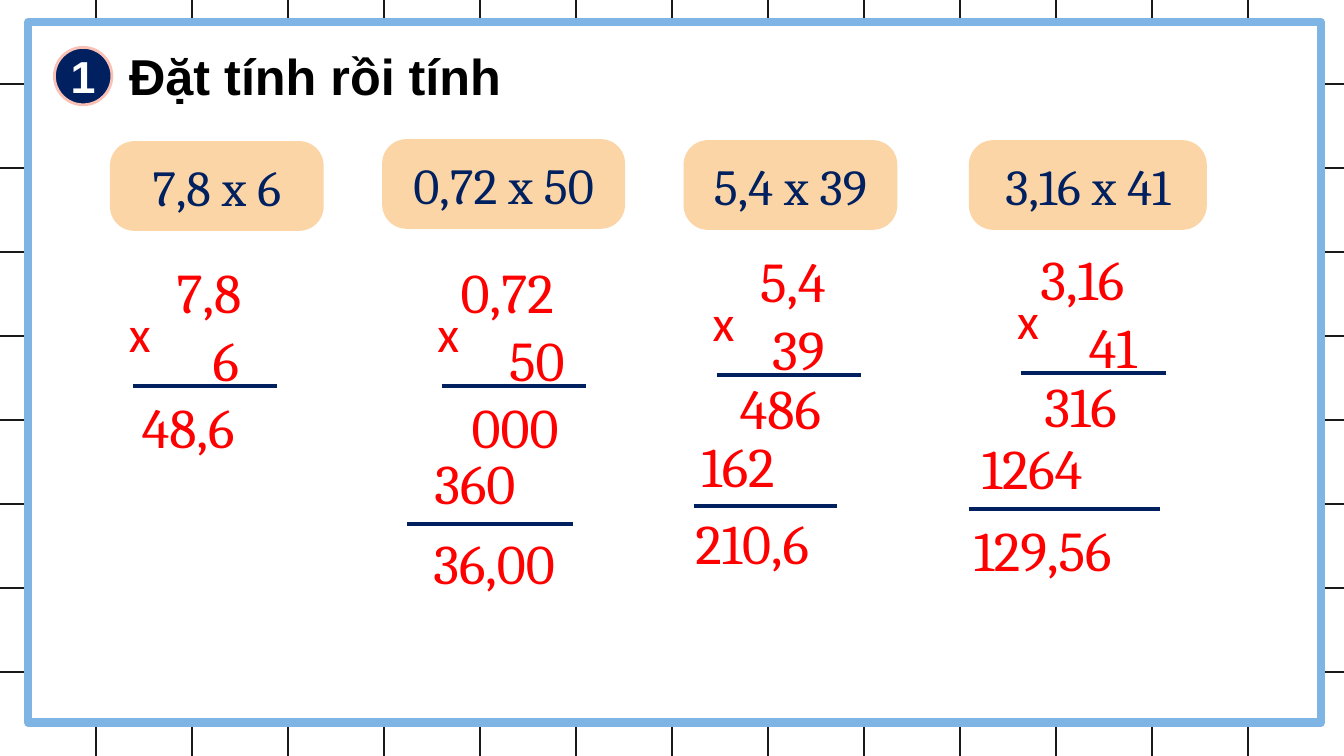
from lxml import etree
from pptx import Presentation
from pptx.dml.color import RGBColor
from pptx.enum import shapes as kinds, text as layout
from pptx.oxml.ns import qn
from pptx.util import Inches, Pt

NAVY = RGBColor(0x00, 0x20, 0x60)
RED = RGBColor(0xFF, 0x00, 0x00)
BLACK = RGBColor(0x00, 0x00, 0x00)
WHITE = RGBColor(0xFF, 0xFF, 0xFF)
GRID = RGBColor(0x19, 0x19, 0x19)
SKY = RGBColor(0x7F, 0xB5, 0xE5)
PINK = RGBColor(0xF9, 0xC1, 0xB5)
PEACH = RGBColor(0xFB, 0xD5, 0xA6)

WIDTH, HEIGHT = 13.33, 7.5
SPACE = 0.12  # width of one Cambria space at 40 pt

# Card: (text, left, top, width).
# Factors: left and top, then (number, indent in spaces) for each row.
# Products: (number, left, top). Sum line: (left, top, width) or None.
EXERCISES = [
    {"card": ("7,8 x 6", 1.09, 1.4, 2.12),
     "factors": (1.41, 2.51, [("7,8", 2), ("6", 5)]),
     "products": [("48,6", 1.31, 3.85)],
     "sum_line": None},
    {"card": ("0,72 x 50", 3.79, 1.38, 2.41),
     "factors": (4.47, 2.51, [("0,72", 0), ("50", 4)]),
     "products": [("000", 4.58, 3.85), ("360", 4.21, 4.4), ("36,00", 4.2, 5.19)],
     "sum_line": (4.04, 5.2, 1.64)},
    {"card": ("5,4 x 39", 6.78, 1.39, 2.12),
     "factors": (7.2, 2.4, [("5,4", 2), ("39", 3)]),
     "products": [("486", 7.24, 3.66), ("162", 6.86, 4.23), ("210,6", 6.8, 5)],
     "sum_line": (6.88, 5.02, 1.42)},
    {"card": ("3,16 x 41", 9.61, 1.39, 2.36),
     "factors": (10.22, 2.38, [("3,16", 0), ("41", 4)]),
     "products": [("316", 10.26, 3.64), ("1264", 9.64, 4.25), ("129,56", 9.56, 5.07)],
     "sum_line": (9.61, 5.05, 1.9)},
]


def add_run(paragraph, words, size, font, color, bold=False):
    run = paragraph.add_run()
    run.text = words
    run.font.size = Pt(size)
    run.font.name = font
    run.font.bold = bold
    run.font.color.rgb = color


def add_line(slide, x1, y1, x2, y2, color, weight):
    line = slide.shapes.add_connector(
        kinds.MSO_CONNECTOR.STRAIGHT, Inches(x1), Inches(y1), Inches(x2), Inches(y2))
    line.line.color.rgb = color
    line.line.width = Pt(weight)
    etree.SubElement(line.element.spPr, qn("a:effectLst"))


def add_panel(slide, preset, left, top, width, height, fill, outline=None, weight=0):
    """Add a flat filled shape, outlined only when a colour is given."""
    panel = slide.shapes.add_shape(
        preset, Inches(left), Inches(top), Inches(width), Inches(height))
    panel.shadow.inherit = False
    panel.fill.solid()
    panel.fill.fore_color.rgb = fill
    if outline is None:
        panel.line.fill.background()
    else:
        panel.line.color.rgb = outline
        panel.line.width = Pt(weight)
    return panel


def add_label(panel, words, size, font, color, bold=False):
    """Centre one line of text in a shape."""
    frame = panel.text_frame
    frame.word_wrap = False
    frame.vertical_anchor = layout.MSO_ANCHOR.MIDDLE
    frame.paragraphs[0].alignment = layout.PP_ALIGN.CENTER
    add_run(frame.paragraphs[0], words, size, font, color, bold)


def add_rows(slide, left, top, width, height, rows, size=40, font="Cambria"):
    """Add red text with one paragraph per (words, indent in spaces)."""
    box = slide.shapes.add_textbox(
        Inches(left), Inches(top), Inches(width), Inches(height))
    frame = box.text_frame
    frame.word_wrap = True
    for index, (words, spaces) in enumerate(rows):
        paragraph = frame.add_paragraph() if index else frame.paragraphs[0]
        if spaces:
            properties = paragraph._p.get_or_add_pPr()
            properties.set("marL", str(Inches(spaces * SPACE)))
            properties.set("indent", "0")
        add_run(paragraph, words, size, font, RED)


def add_grid(slide):
    for column in range(1, 14):
        x = column * WIDTH / 14
        add_line(slide, x, 0, x, HEIGHT, GRID, 1.5)
    for row in range(1, 9):
        y = row * HEIGHT / 9
        add_line(slide, 0, y, WIDTH, y, GRID, 1.5)


def set_title(slide, words):
    title = slide.shapes.title
    title.left, title.top = Inches(1.18), Inches(0.4)
    title.width, title.height = Inches(4.54), Inches(0.71)
    frame = title.text_frame
    frame.word_wrap = True
    frame.auto_size = layout.MSO_AUTO_SIZE.NONE
    frame.vertical_anchor = layout.MSO_ANCHOR.TOP
    frame.paragraphs[0].alignment = layout.PP_ALIGN.LEFT
    add_run(frame.paragraphs[0], words, 36, "Arial", BLACK, bold=True)
    # Bring the title in front of the white panel.
    title.element.getparent().append(title.element)


def add_exercise(slide, card, factors, products, sum_line):
    words, left, top, width = card
    panel = add_panel(slide, kinds.MSO_SHAPE.ROUNDED_RECTANGLE,
                      left, top, width, 0.89, PEACH)
    panel.adjustments[0] = 0.273
    add_label(panel, words, 36, "Cambria", NAVY)

    left, top, rows = factors
    add_rows(slide, left, top, 1.39, 1.45, rows)
    add_rows(slide, left - 0.23, top + 0.44, 0.85, 0.71, [("x", 0)], 36, "Calibri")
    add_line(slide, left - 0.09, top + 1.32, left + 1.34, top + 1.32, NAVY, 3)

    for number, left, top in products:
        add_rows(slide, left, top, 1.97, 0.77, [(number, 0)])
    if sum_line:
        left, top, width = sum_line
        add_line(slide, left, top, left + width, top, NAVY, 3)


def main():
    deck = Presentation()
    deck.slide_width, deck.slide_height = Inches(WIDTH), Inches(HEIGHT)
    slide = deck.slides.add_slide(deck.slide_layouts.get_by_name("Title Only"))

    add_grid(slide)
    add_panel(slide, kinds.MSO_SHAPE.RECTANGLE, 0.28, 0.22, 12.82, 6.95, WHITE, SKY, 6)
    badge = add_panel(slide, kinds.MSO_SHAPE.OVAL, 0.54, 0.47, 0.57, 0.57, NAVY, PINK, 2)
    add_label(badge, "1", 32, "Arial", WHITE, bold=True)
    set_title(slide, "Đặt tính rồi tính")
    for exercise in EXERCISES:
        add_exercise(slide, **exercise)

    deck.save("out.pptx")


if __name__ == "__main__":
    main()
